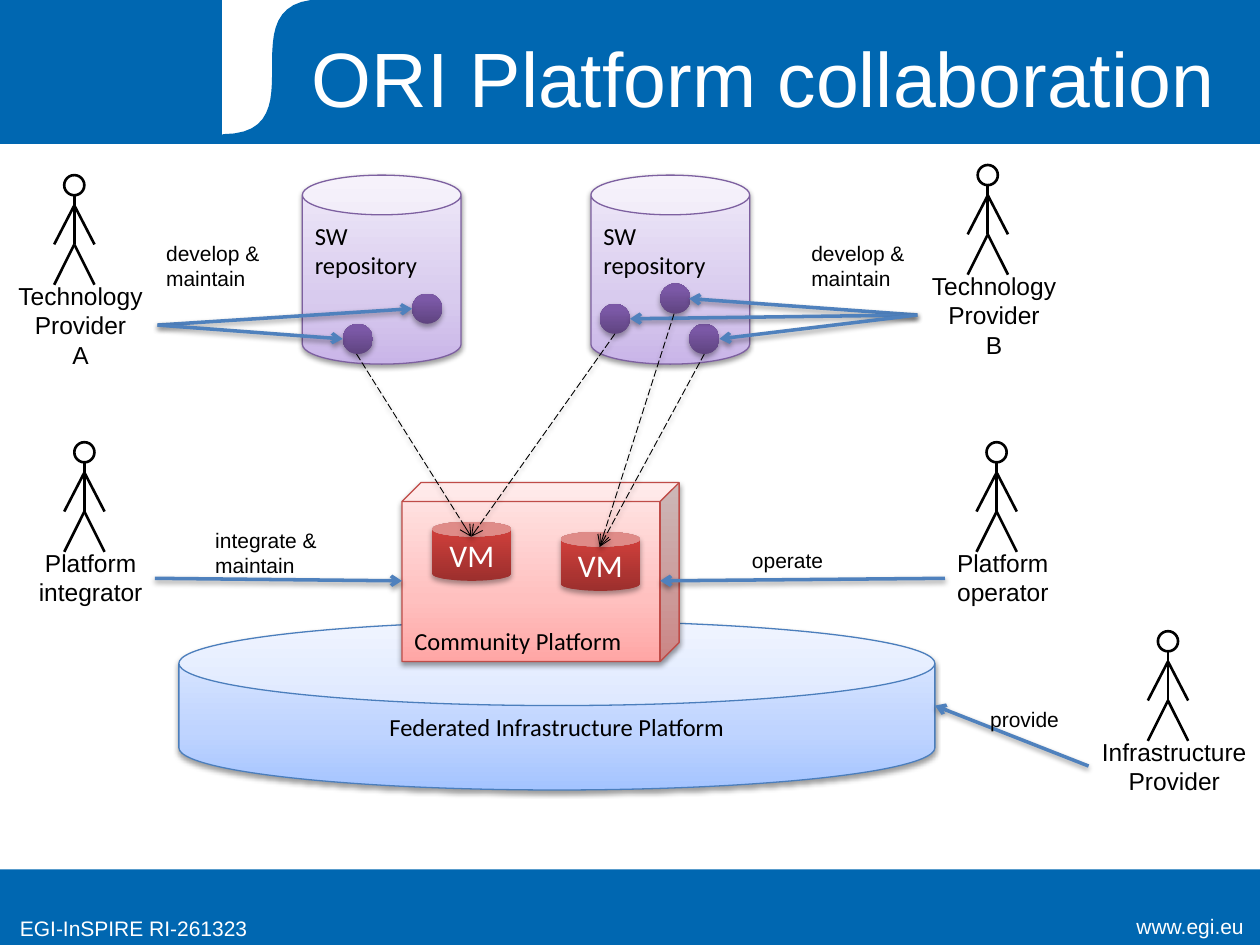
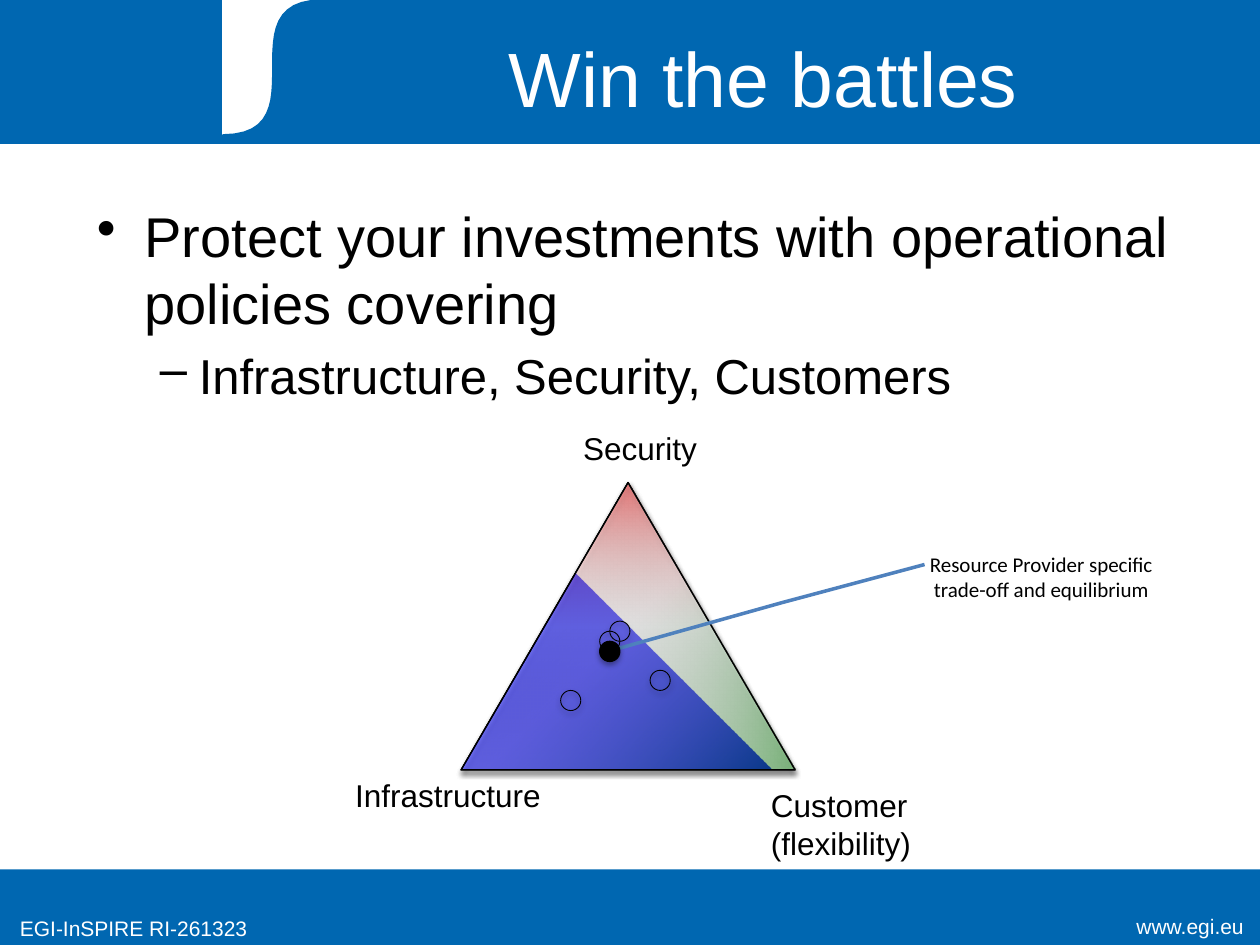
from lxml import etree
from pptx import Presentation
from pptx.dml.color import RGBColor
from pptx.enum import dml, shapes, text
from pptx.oxml.ns import qn
from pptx.util import Inches, Pt

COLORS = {"band": "0067B1", "white": "FFFFFF", "black": "000000", "arrow": "4F81BD",
          "federation": "4B7EBC", "community": "BF4C48", "repository": "7D60A0"}
# Gradient stops: position in percent, colour, opacity in percent
GRADIENTS = {
    "federation": [(0, "A4C4FF", 100), (35, "BFD4FF", 100), (100, "E6EEFF", 100)],
    "community": [(0, "FFA6A5", 100), (35, "FFC0BF", 100), (100, "FFE7E7", 100)],
    "repository": [(0, "C9B5E8", 100), (35, "D8CBEE", 100), (100, "F0EAF9", 100)],
    "vm": [(0, "9C2F2D", 100), (80, "CB3E3A", 100), (100, "CE3B37", 100)],
    "package": [(0, "5F4480", 100), (80, "7B58A6", 100), (100, "7C57A8", 100)],
    "security": [(0, "FFFFFF", 0), (50, "FFFFFF", 100), (100, "FF0000", 100)],
    "customer": [(0, "FFFFFF", 0), (50, "FFFFFF", 50), (100, "008000", 100)],
    "infrastructure": [(0, "FFFFFF", 0), (50, "FFFFFF", 50),
                       (50, "0000FF", 50), (100, "0000FF", 50)],
}
SOFT, STRONG = (38, 1.6), (35, 1.8)  # shadow opacity and distance
LEFT, CENTER, RIGHT = text.PP_ALIGN.LEFT, text.PP_ALIGN.CENTER, text.PP_ALIGN.RIGHT
TOP, MIDDLE, BOTTOM = (text.MSO_ANCHOR.TOP, text.MSO_ANCHOR.MIDDLE,
                       text.MSO_ANCHOR.BOTTOM)
PRESET = shapes.MSO_SHAPE
STRAIGHT = shapes.MSO_CONNECTOR.STRAIGHT


def paint(shape, fill=None, line=None, width=0.75, shadow=None, angle=90,
          arrow=False, dash=None):
    """Style a shape or connector; a list as fill is a gradient."""
    properties = shape._element.spPr
    if isinstance(fill, list):
        shape.fill.gradient()
        shape.fill.gradient_angle = angle
        stops = properties.find(qn("a:gradFill")).find(qn("a:gsLst"))
        for stop in list(stops):
            stops.remove(stop)
        for position, color, opacity in fill:
            stop = etree.SubElement(stops, qn("a:gs"), pos=str(position * 1000))
            tone = etree.SubElement(stop, qn("a:srgbClr"), val=color)
            etree.SubElement(tone, qn("a:alpha"), val=str(opacity * 1000))
    elif fill:
        shape.fill.solid()
        shape.fill.fore_color.rgb = RGBColor.from_string(fill)
    elif hasattr(shape, "fill"):
        shape.fill.background()
    if line:
        shape.line.color.rgb = RGBColor.from_string(line)
        shape.line.width = Pt(width)
    else:
        shape.line.fill.background()
    if dash:
        shape.line.dash_style = dash
    if arrow:
        etree.SubElement(properties.find(qn("a:ln")), qn("a:tailEnd"), type="arrow")
    effects = etree.SubElement(properties, qn("a:effectLst"))
    if shadow:
        opacity, distance = shadow
        outer = etree.SubElement(effects, qn("a:outerShdw"), blurRad=str(Pt(3.1)),
                                 dist=str(Pt(distance)), dir="5400000", rotWithShape="0")
        tone = etree.SubElement(outer, qn("a:srgbClr"), val=COLORS["black"])
        etree.SubElement(tone, qn("a:alpha"), val=str(opacity * 1000))


def write(shape, lines, size, font="Arial", color="black", align=LEFT, anchor=TOP,
          wrap=True):
    frame = shape.text_frame
    frame.word_wrap = wrap
    frame.vertical_anchor = anchor
    for index, line in enumerate(lines):
        paragraph = frame.add_paragraph() if index else frame.paragraphs[0]
        paragraph.alignment = align
        run = paragraph.add_run()
        run.text = line
        run.font.size = Pt(size)
        run.font.name = font
        run.font.color.rgb = RGBColor.from_string(COLORS[color])


presentation = Presentation()
presentation.slide_width, presentation.slide_height = Inches(10), Inches(7.5)

# Shared frame: bands, curved tab, title and footers
curve = []
for step in range(25):
    t = step / 24
    x = 1.77 * ((1 - t) ** 3 + 3 * (1 - t) * t ** 2) + 2.56 * (3 * (1 - t) ** 2 * t + t ** 3)
    y = 1.07 * ((1 - t) ** 3 + 3 * (1 - t) ** 2 * t)
    curve.append((Inches(x), Inches(y)))

for title in ("ORI Platform collaboration", "Win the battles"):
    slide = presentation.slides.add_slide(presentation.slide_layouts[6])
    for left, top, width, height, color, outline in (
            (0, 6.9, 10, 0.6, "band", None),
            (0, 0, 10, 1.14, "band", COLORS["band"]),
            (1.77, 0, 1.97, 1.07, "white", COLORS["white"])):
        band = slide.shapes.add_shape(PRESET.RECTANGLE, Inches(left), Inches(top),
                                      Inches(width), Inches(height))
        paint(band, COLORS[color], outline)
    builder = slide.shapes.build_freeform(Inches(3.74), 0)
    builder.add_line_segments([(Inches(3.74), Inches(1.07))] + curve, close=True)
    paint(builder.convert_to_shape(), COLORS["band"], COLORS["band"])
    for left, top, width, height, words, size, align, anchor in (
            (2.32, 0.13, 7.48, 0.95, title, 44, CENTER, MIDDLE),
            (8.39, 7.2, 1.58, 0.31, "www.egi.eu", 12, RIGHT, TOP),
            (0.06, 7.22, 2.5, 0.31, "EGI-InSPIRE RI-261323", 12, LEFT, TOP)):
        box = slide.shapes.add_textbox(Inches(left), Inches(top),
                                       Inches(width), Inches(height))
        write(box, [words], size, color="white", align=align, anchor=anchor)

collaboration, battles = presentation.slides

# Slide 1: platforms, repositories and virtual machines
for preset, left, top, width, height, kind, bend, words, size, align, anchor in (
        (PRESET.CAN, 1.42, 4.93, 6, 1.34, "federation", 0.5,
         "Federated Infrastructure Platform", 14, CENTER, MIDDLE),
        (PRESET.CUBE, 3.19, 3.83, 2.2, 1.42, "community", 0.106,
         "Community Platform", 14, LEFT, BOTTOM),
        (PRESET.CAN, 3.43, 4.14, 0.63, 0.47, "vm", 0.25, "VM", 18, CENTER, MIDDLE),
        (PRESET.CAN, 4.45, 4.22, 0.63, 0.47, "vm", 0.25, "VM", 18, CENTER, MIDDLE),
        (PRESET.CAN, 2.4, 1.39, 1.26, 1.5, "repository", 0.25,
         "SW repository", 14, LEFT, TOP),
        (PRESET.CAN, 4.69, 1.39, 1.26, 1.5, "repository", 0.25,
         "SW repository", 14, LEFT, TOP)):
    solid = collaboration.shapes.add_shape(preset, Inches(left), Inches(top),
                                           Inches(width), Inches(height))
    solid.adjustments[0] = bend
    paint(solid, GRADIENTS[kind], COLORS.get(kind), shadow=STRONG if kind == "vm" else SOFT)
    write(solid, [words], size, "Calibri", "white" if kind == "vm" else "black",
          align, anchor)

for left, top in ((3.27, 2.33), (2.72, 2.57), (5.24, 2.25), (4.76, 2.41), (5.47, 2.57)):
    package_dot = collaboration.shapes.add_shape(PRESET.OVAL, Inches(left), Inches(top),
                                                 Inches(0.24), Inches(0.24))
    paint(package_dot, GRADIENTS["package"], shadow=STRONG)

# Actors: a stick figure with the role below
LIMBS = ((0, 0.16, 0, 0.55), (0, 0.55, -0.16, 0.87), (0, 0.55, 0.16, 0.87),
         (0, 0.24, -0.16, 0.55), (0, 0.24, 0.16, 0.55))
for center, top, role in (
        (0.59, 1.39, ["Technology", "Provider", "A"]),
        (7.84, 1.31, ["Technology", "Provider", "B"]),
        (0.67, 3.51, ["Platform", "integrator"]),
        (7.91, 3.51, ["Platform", "operator"]),
        (9.27, 5.01, ["Infrastructure", "Provider"])):
    head = collaboration.shapes.add_shape(PRESET.OVAL, Inches(center - 0.08), Inches(top),
                                          Inches(0.16), Inches(0.16))
    paint(head, line=COLORS["black"], width=1.5)
    for x1, y1, x2, y2 in LIMBS:
        limb = collaboration.shapes.add_connector(
            STRAIGHT, Inches(center + x1), Inches(top + y1),
            Inches(center + x2), Inches(top + y2))
        paint(limb, line=COLORS["black"], width=1.5)
    box = collaboration.shapes.add_textbox(Inches(center - 0.63), Inches(top + 0.79),
                                           Inches(1.36), Inches(0.1 + 0.235 * len(role)))
    write(box, role, 14, align=CENTER, wrap=False)

# Actions are solid arrows, deployments are dashed ones
ACTIONS = ((1.25, 2.58, 3.27, 2.45), (1.25, 2.58, 2.72, 2.69), (7.28, 2.5, 5.47, 2.37),
           (7.28, 2.5, 5, 2.53), (7.28, 2.5, 5.71, 2.69), (1.23, 4.59, 3.19, 4.61),
           (7.5, 4.59, 5.24, 4.61), (8.64, 6.08, 7.42, 5.6))
DEPLOYMENTS = ((2.83, 2.81, 3.74, 4.26), (4.88, 2.65, 3.74, 4.26),
               (5.59, 2.81, 4.76, 4.34), (5.35, 2.49, 4.76, 4.34))
for routes, color, width, dash in (
        (ACTIONS, "arrow", 2, None),
        (DEPLOYMENTS, "black", 0.5, dml.MSO_LINE.LONG_DASH)):
    for route in routes:
        connector = collaboration.shapes.add_connector(STRAIGHT, *map(Inches, route))
        paint(connector, line=COLORS[color], width=width, shadow=SOFT, arrow=True, dash=dash)

for left, top, width, action in (
        (1.22, 1.86, 0.95, ["develop &", "maintain"]),
        (6.34, 1.86, 0.95, ["develop &", "maintain"]),
        (1.61, 4.14, 1.02, ["integrate &", "maintain"]),
        (5.87, 4.3, 0.77, ["operate"]),
        (7.76, 5.56, 0.75, ["provide"])):
    box = collaboration.shapes.add_textbox(Inches(left), Inches(top), Inches(width),
                                           Inches(0.1 + 0.2 * len(action)))
    write(box, action, 12, wrap=False)

# Slide 2: bullets
body = battles.shapes.add_textbox(Inches(0.67), Inches(1.55), Inches(8.83), Inches(1.89))
write(body, ["Protect your investments with operational policies covering",
             "Infrastructure, Security, Customers"], 32)
for paragraph, mark, margin, indent in zip(body.text_frame.paragraphs, "•–",
                                           (0.38, 0.81), (-0.38, -0.31)):
    paragraph_properties = paragraph._p.get_or_add_pPr()
    paragraph_properties.set("marL", str(Inches(margin)))
    paragraph_properties.set("indent", str(Inches(indent)))
    etree.SubElement(paragraph_properties, qn("a:buChar"), char=mark)
detail = body.text_frame.paragraphs[1]
detail.level = 1
detail.space_before = Pt(5.6)
detail.runs[0].font.size = Pt(28)

# Trade-off triangle: three translucent layers, one per corner
for left, top, width, height, corner in (
        (4.53, 3.36, 1.11, 0.4, ["Security"]),
        (2.72, 6.11, 1.69, 0.4, ["Infrastructure"]),
        (6.02, 6.19, 1.32, 0.71, ["Customer", "(flexibility)"])):
    box = battles.shapes.add_textbox(Inches(left), Inches(top), Inches(width), Inches(height))
    write(box, corner, 18, wrap=False)

for corner, angle in (("security", 90), ("customer", 315), ("infrastructure", 225)):
    layer = battles.shapes.add_shape(PRESET.ISOSCELES_TRIANGLE, Inches(3.66), Inches(3.83),
                                     Inches(2.65), Inches(2.28))
    paint(layer, GRADIENTS[corner], COLORS["black"], shadow=STRONG, angle=angle)

callout = battles.shapes.add_shape(PRESET.LINE_CALLOUT_2_NO_BORDER, Inches(7.2), Inches(4.38),
                                   Inches(2.13), Inches(0.39))
for index, value in enumerate((0.258, 0.065, 1.034, -0.467, 1.962, -1.074)):
    callout.adjustments[index] = value
paint(callout, COLORS["white"], COLORS["arrow"], 2)
write(callout, ["Resource Provider specific trade-off and equilibrium"], 12, "Calibri",
      align=CENTER, anchor=MIDDLE)

for left, top, fill, width in (
        (4.76, 5.09, COLORS["black"], 0.75), (4.45, 5.48, None, 0.5),
        (4.76, 5.01, None, 0.5), (5.16, 5.32, None, 0.5), (4.84, 4.93, None, 0.5)):
    equilibrium = battles.shapes.add_shape(PRESET.OVAL, Inches(left), Inches(top),
                                           Inches(0.16), Inches(0.16))
    paint(equilibrium, fill, COLORS["black"], width, STRONG)

presentation.save("out.pptx")
